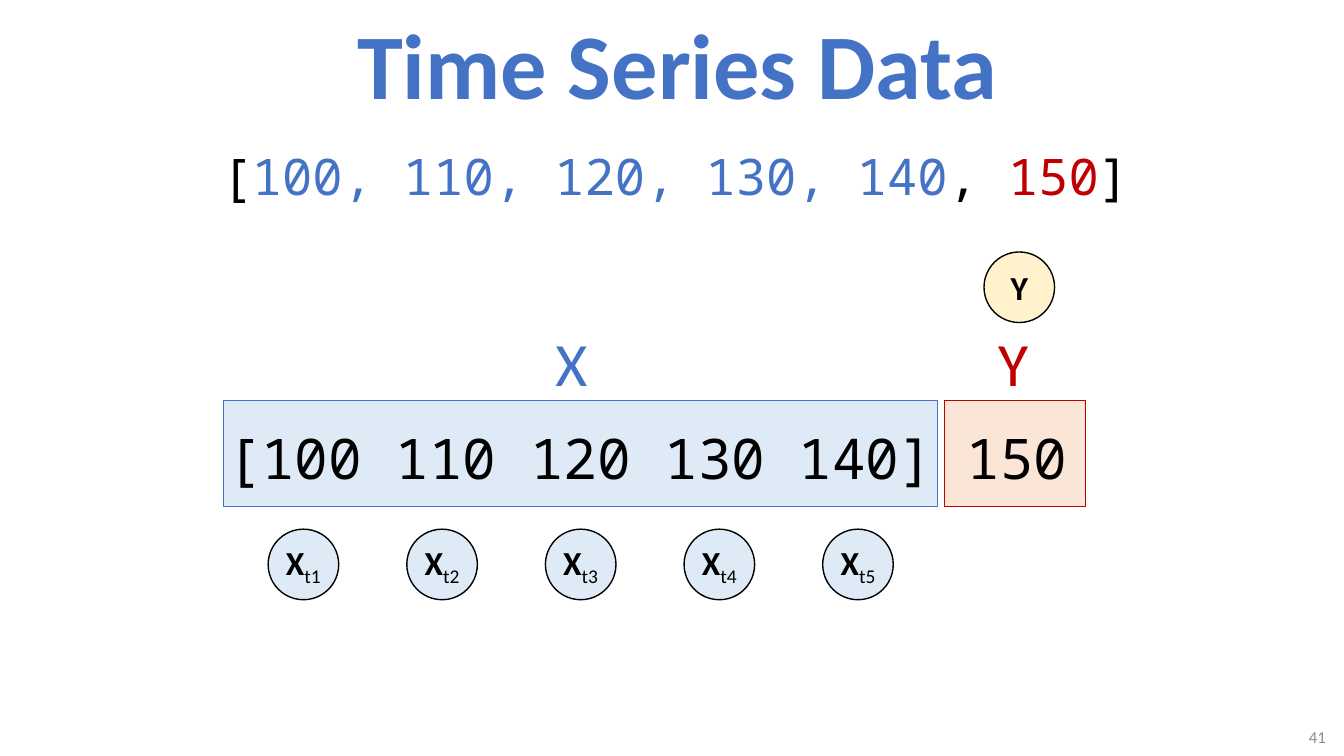
import pptx
import pptx.dml.color
import pptx.enum.shapes
import pptx.enum.text
import pptx.util

Inches = pptx.util.Inches
SHAPES = pptx.enum.shapes.MSO_SHAPE
ALIGN = pptx.enum.text.PP_ALIGN
ANCHOR = pptx.enum.text.MSO_ANCHOR
FIT = pptx.enum.text.MSO_AUTO_SIZE

BLUE, RED, BLACK, GRAY = "4472C4", "C00000", "000000", "8C8C8C"
PALE_BLUE, PALE_RED, PALE_YELLOW = "DEEBF7", "FBE5D6", "FFF2CC"
SANS, MONO = "Calibri", "Noto Sans Mono"
CIRCLE_SIZE = 0.7


def color(value):
    return pptx.dml.color.RGBColor.from_string(value)


def add_span(para, text, size=24, font=SANS, ink=BLACK, bold=False, baseline=None):
    span = para.add_run()
    span.text = text
    span.font.size = pptx.util.Pt(size)
    span.font.name = font
    span.font.bold = bold
    span.font.color.rgb = color(ink)
    if baseline is not None:
        span._r.get_or_add_rPr().set("baseline", str(baseline * 1000))


def add_text(page, box, spans, align=ALIGN.LEFT, anchor=ANCHOR.TOP, wrap=True, grow=False, **style):
    frame = page.shapes.add_textbox(*map(Inches, box)).text_frame
    frame.word_wrap = wrap
    frame.auto_size = FIT.SHAPE_TO_FIT_TEXT if grow else FIT.NONE
    frame.vertical_anchor = anchor
    para = frame.paragraphs[0]
    para.alignment = align
    for text, ink in spans:
        add_span(para, text, ink=ink, **style)


def add_block(page, kind, box, fill, line, weight):
    block = page.shapes.add_shape(kind, *map(Inches, box))
    block.shadow.inherit = False
    block.fill.solid()
    block.fill.fore_color.rgb = color(fill)
    block.line.color.rgb = color(line)
    block.line.width = pptx.util.Pt(weight)
    return block


def add_node(page, left, top, letter, subscript, fill):
    box = (left, top, CIRCLE_SIZE, CIRCLE_SIZE)
    frame = add_block(page, SHAPES.OVAL, box, fill, BLACK, 1).text_frame
    frame.margin_left = frame.margin_right = frame.margin_top = frame.margin_bottom = 0
    frame.vertical_anchor = ANCHOR.MIDDLE
    para = frame.paragraphs[0]
    para.alignment = ALIGN.CENTER
    add_span(para, letter, bold=True)
    if subscript:
        add_span(para, subscript, baseline=-25)


def add_heading(page, left, top, width):
    add_text(page, (left, top, width, 1.25), [("Time Series Data", BLUE)],
             align=ALIGN.CENTER, anchor=ANCHOR.MIDDLE, size=66, bold=True)


def add_series(page, left, top):
    spans = [("[", BLACK), ("100, 110, 120, 130, 140", BLUE), (", ", BLACK), ("150", RED), ("]", BLACK)]
    add_text(page, (left, top, 9.3, 0.71), spans, wrap=False, grow=True, size=36, font=MONO)


def add_sample(page, left, top):
    add_block(page, SHAPES.RECTANGLE, (left + 7.15, top, 1.39, 1.05), PALE_RED, RED, 0.5)
    add_block(page, SHAPES.RECTANGLE, (left, top, 7.08, 1.05), PALE_BLUE, BLUE, 0.5)
    add_text(page, (left - 0.06, top + 0.18, 8.68, 0.77), [("[100 110 120 130 140] 150", BLACK)],
             grow=True, size=40, font=MONO)
    for offset, label, ink in ((3.19, "X", BLUE), (7.58, "Y", RED)):
        add_text(page, (left + offset, top - 0.8, 0.52, 0.84), [(label, ink)],
                 wrap=False, grow=True, size=44)


def add_inputs(page, left, top, width, count):
    pitch = (width - CIRCLE_SIZE) / (count - 1)
    for step in range(count):
        add_node(page, left + step * pitch, top, "X", f"t{step + 1}", PALE_BLUE)


def add_page_number(page, left, top):
    add_text(page, (left, top, 1.05, 0.26), [("41", GRAY)],
             align=ALIGN.RIGHT, anchor=ANCHOR.MIDDLE, size=12)


def main():
    deck = pptx.Presentation()
    deck.slide_width, deck.slide_height = Inches(13.33), Inches(7.5)
    page = deck.slides.add_slide(deck.slide_layouts[6])
    add_heading(page, 2.22, 0, 9)
    add_series(page, 2.1, 1.39)
    add_sample(page, 2.22, 3.97)
    add_inputs(page, 2.66, 5.25, 6.2, 5)
    add_node(page, 9.76, 2.5, "Y", None, PALE_YELLOW)
    add_page_number(page, 12.2, 7.18)
    deck.save("out.pptx")


if __name__ == "__main__":
    main()
